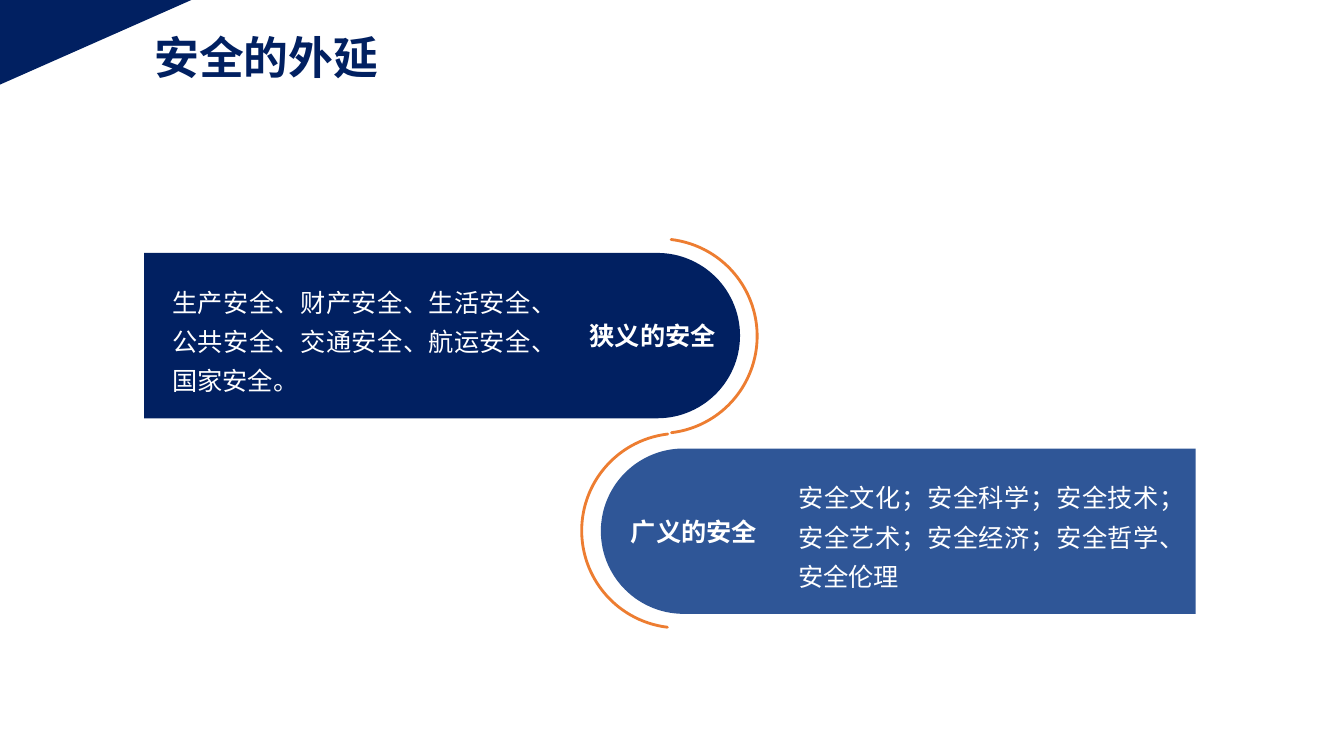
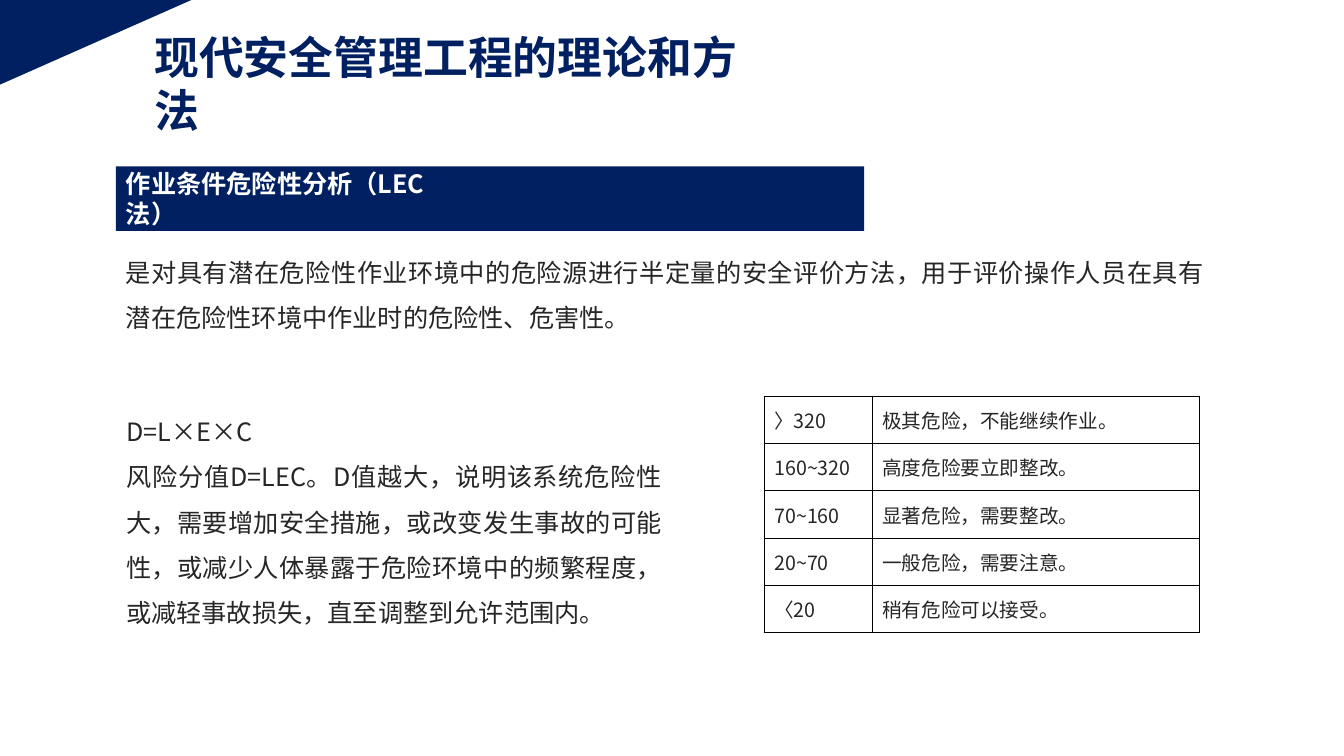
import math

from lxml import etree
from pptx import Presentation
from pptx.dml.color import RGBColor
from pptx.enum.shapes import MSO_SHAPE
from pptx.enum.text import MSO_ANCHOR, MSO_AUTO_SIZE, PP_ALIGN
from pptx.oxml.ns import qn
from pptx.util import Inches, Pt

TOP, MIDDLE = MSO_ANCHOR.TOP, MSO_ANCHOR.MIDDLE
LEFT, JUSTIFY = PP_ALIGN.LEFT, PP_ALIGN.JUSTIFY
NO_AUTOFIT = MSO_AUTO_SIZE.NONE
TRIANGLE, BLOCK_ARC, RECTANGLE = MSO_SHAPE.RIGHT_TRIANGLE, MSO_SHAPE.BLOCK_ARC, MSO_SHAPE.RECTANGLE

FONT = "Noto Sans CJK SC"
COLORS = {
    "navy": "012061",
    "blue": "2F5697",
    "arc": "4472C4",
    "orange": "ED7D31",
    "white": "FFFFFF",
    "text": "262626",
    "border": "000000",
}
TITLE = {"size": 32, "color": "navy", "bold": True}
LABEL = {"size": 18, "color": "white", "bold": True}
PILL_TEXT = {"size": 18, "color": "white", "align": JUSTIFY, "spacing": 1.3}
BODY = {"size": 18, "color": "text", "align": JUSTIFY, "spacing": 1.5}
CELL = {"size": 14, "color": "text", "anchor": MIDDLE, "hanging": 0.38}


def write(frame, lines, size, color, bold=False, align=LEFT, spacing=1.0, anchor=TOP, hanging=0):
    frame.word_wrap = True
    frame.vertical_anchor = anchor
    frame.text = "\n".join(lines)
    for paragraph in frame.paragraphs:
        settings = {"alignment": align, "line_spacing": spacing, "space_before": Pt(0)}
        for name, value in settings.items():
            setattr(paragraph, name, value)
        properties = paragraph._p.get_or_add_pPr()
        properties.set("marL", str(Inches(hanging)))
        properties.set("indent", str(-Inches(hanging)))
        etree.SubElement(properties, qn("a:buNone"))
        font = paragraph.runs[0].font
        for name, value in {"size": Pt(size), "bold": bold, "name": FONT}.items():
            setattr(font, name, value)
        font.color.rgb = RGBColor.from_string(COLORS[color])
        etree.SubElement(font._element, qn("a:ea"), typeface=FONT)


def paint(shape, fill, line=None):
    shape.shadow.inherit = False
    shape.fill.solid()
    shape.fill.fore_color.rgb = RGBColor.from_string(COLORS[fill])
    if line:
        shape.line.color.rgb = RGBColor.from_string(COLORS[line])
        shape.line.width = Pt(2)
    else:
        shape.line.fill.background()


presentation = Presentation()
presentation.slide_width = Inches(13.33)
presentation.slide_height = Inches(7.5)

slides = []
for layout, title, width in [(5, "安全的外延", 2.45), (1, "现代安全管理工程的理论和方法", 6.42)]:
    slide = presentation.slides.add_slide(presentation.slide_layouts[layout])
    corner = slide.shapes.add_shape(TRIANGLE, 0, 0, Inches(1.9), Inches(0.84))
    corner.element.spPr.xfrm.set("flipV", "1")
    paint(corner, "navy")
    heading = slide.shapes.title
    heading.left, heading.top = Inches(1.43), Inches(0.24)
    heading.width, heading.height = Inches(width), Inches(0.64)
    write(heading.text_frame, [title], **TITLE)
    heading.text_frame.auto_size = NO_AUTOFIT
    slides.append(slide)
scope_slide, method_slide = slides

RADIUS = 0.82
pills = [
    (1.43, 6.52, 2.51, 1, "navy"),
    (11.86, 6.78, 4.45, -1, "blue"),
]
for flat_end, center, top, direction, color in pills:
    points = [
        (
            Inches(center + direction * RADIUS * math.cos(math.radians(angle))),
            Inches(top + RADIUS + RADIUS * math.sin(math.radians(angle))),
        )
        for angle in range(-90, 91, 3)
    ]
    points.append((Inches(flat_end), Inches(top + 2 * RADIUS)))
    builder = scope_slide.shapes.build_freeform(Inches(flat_end), Inches(top))
    builder.add_line_segments(points, close=True)
    paint(builder.convert_to_shape(), color)

for left, top, flipped in [(5.58, 2.37, False), (5.77, 4.3, True)]:
    arc = scope_slide.shapes.add_shape(BLOCK_ARC, Inches(left), Inches(top), Inches(1.93), Inches(1.93))
    for index, value in enumerate([165.98, 49.89, 0]):
        arc.adjustments[index] = value
    if flipped:
        arc.element.spPr.xfrm.set("flipH", "1")
    paint(arc, "arc", "orange")

bar = method_slide.shapes.add_shape(RECTANGLE, Inches(1.15), Inches(1.65), Inches(7.42), Inches(0.64))
paint(bar, "navy")

texts = [
    (scope_slide, (5.75, 3.13, 1.46, 0.4), "狭义的安全", LABEL),
    (scope_slide, (1.61, 2.71, 3.76, 1.24),
     "生产安全、财产安全、生活安全、公共安全、交通安全、航运安全、国家安全。", PILL_TEXT),
    (scope_slide, (6.16, 5.07, 1.46, 0.4), "广义的安全", LABEL),
    (scope_slide, (7.82, 4.65, 4.03, 1.24),
     "安全文化；安全科学；安全技术；安全艺术；安全经济；安全哲学、安全伦理", PILL_TEXT),
    (method_slide, (1.15, 1.77, 3.64, 0.39), "作业条件危险性分析（LEC法）", {**LABEL, "anchor": MIDDLE}),
    (method_slide, (1.15, 2.35, 10.9, 0.99),
     "是对具有潜在危险性作业环境中的危险源进行半定量的安全评价方法，"
     "用于评价操作人员在具有潜在危险性环境中作业时的危险性、危害性。", BODY),
]
for slide, box, text, style in texts:
    text_box = slide.shapes.add_textbox(*map(Inches, box))
    write(text_box.text_frame, [text], **style)

explanation = method_slide.placeholders[1]
explanation.left, explanation.top = Inches(1.15), Inches(3.93)
explanation.width, explanation.height = Inches(5.52), Inches(2.32)
write(explanation.text_frame, [
    "D=L×E×C",
    "风险分值D=LEC。D值越大，说明该系统危险性大，需要增加安全措施，或改变发生事故的可能性，"
    "或减少人体暴露于危险环境中的频繁程度，或减轻事故损失，直至调整到允许范围内。",
], **BODY)
explanation.text_frame.auto_size = NO_AUTOFIT

risk_levels = [
    ("〉320", "极其危险，不能继续作业。"),
    ("160~320", "高度危险要立即整改。"),
    ("70~160", "显著危险，需要整改。"),
    ("20~70", "一般危险，需要注意。"),
    ("〈20", "稍有危险可以接受。"),
]
table = method_slide.shapes.add_table(
    len(risk_levels), 2, Inches(7.58), Inches(3.93), Inches(4.32), Inches(2.35)
).table
table.first_row = table.horz_banding = False
for column, width in zip(table.columns, (1.07, 3.25)):
    column.width = Inches(width)
for row, level in zip(table.rows, risk_levels):
    row.height = Inches(0.47)
    for cell, text in zip(row.cells, level):
        write(cell.text_frame, [text], **{**CELL, "anchor": TOP})
        cell.vertical_anchor = CELL["anchor"]
        cell.fill.background()
        properties = cell._tc.get_or_add_tcPr()
        for index, side in enumerate(["a:lnL", "a:lnR", "a:lnT", "a:lnB"]):
            border = etree.Element(qn(side), w=str(Pt(1)))
            fill = etree.SubElement(border, qn("a:solidFill"))
            etree.SubElement(fill, qn("a:srgbClr"), val=COLORS["border"])
            properties.insert(index, border)

presentation.save("out.pptx")
